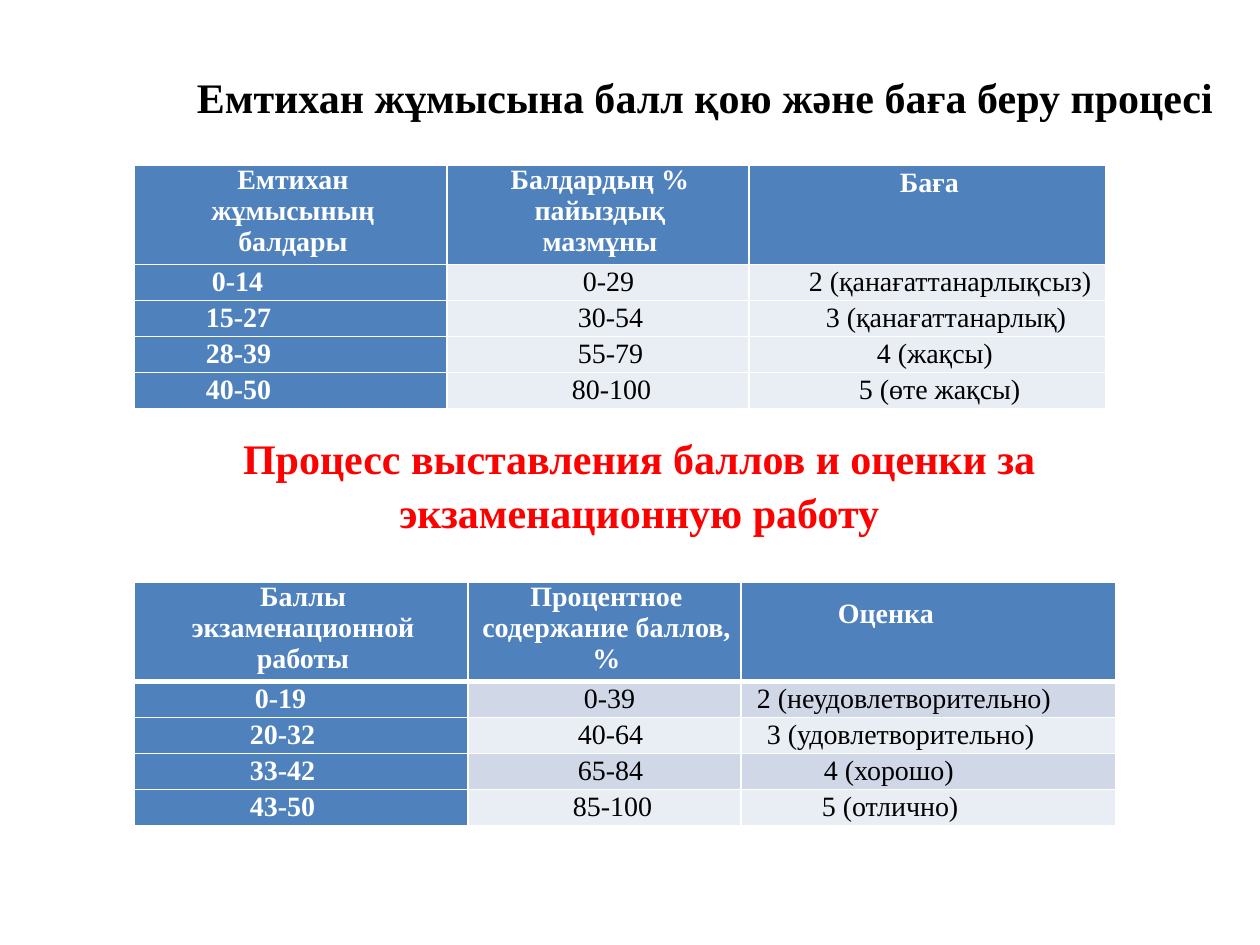
from dataclasses import dataclass

from lxml.etree import SubElement
from pptx import Presentation
from pptx.dml.color import RGBColor
from pptx.enum.text import MSO_AUTO_SIZE as AutoSize, PP_ALIGN as Align
from pptx.oxml.ns import qn
from pptx.util import Pt

PX = 914400 / 126
FONT = "Times New Roman"
BLACK = RGBColor(0, 0, 0)
WHITE = RGBColor(255, 255, 255)
RED = RGBColor(255, 0, 0)
BLUE = RGBColor(0x4F, 0x81, 0xBD)
LIGHT = RGBColor(0xE9, 0xED, 0xF4)
DARKER = RGBColor(0xD0, 0xD8, 0xE8)
HEADER_HEIGHT, ROW_HEIGHT = 99, 36


@dataclass
class Heading:
    text: str
    left: int
    top: int
    width: int
    height: int
    color: RGBColor
    wrap: bool
    indent: int
    line_spacing: float
    align: Align


@dataclass
class Entry:
    text: str
    indent: int
    right: int = 0
    top: int = 0
    centred: bool = False


@dataclass
class GradeTable:
    left: int
    top: int
    columns: list[int]
    bands: list[RGBColor]
    header_rule: int
    rows: list[list[Entry]]


HEADINGS = [
    Heading("Емтихан жұмысына балл қою және баға беру процесі",
            184, 65, 1052, 63, BLACK, False, 13, 1.0, Align.LEFT),
    Heading("Процесс выставления баллов и оценки за экзаменационную работу",
            54, 423, 1160, 122, RED, True, 23, 1.07, Align.CENTER),
]

TABLES = [
    GradeTable(134, 165, [313, 302, 357], [LIGHT], 1, [
        [Entry("Емтихан жұмысының балдары", 31, right=26, centred=True),
         Entry("Балдардың % пайыздық мазмұны", 29, right=25, centred=True),
         Entry("Баға", 151)],
        [Entry("0-14", 78), Entry("0-29", 136), Entry("2 (қанағаттанарлықсыз)", 60)],
        [Entry("15-27", 72), Entry("30-54", 131), Entry("3 (қанағаттанарлық)", 77)],
        [Entry("28-39", 72), Entry("55-79", 131), Entry("4 (жақсы)", 128)],
        [Entry("40-50", 72), Entry("80-100", 125), Entry("5 (өте жақсы)", 110)],
    ]),
    GradeTable(134, 582, [334, 273, 375], [DARKER, LIGHT], 3, [
        [Entry("Баллы экзаменационной работы", 14, right=10, centred=True),
         Entry("Процентное содержание баллов, %", 11, right=7, centred=True),
         Entry("Оценка", 97, top=14)],
        [Entry("0-19", 121), Entry("0-39", 116), Entry("2 (неудовлетворительно)", 16)],
        [Entry("20-32", 116), Entry("40-64", 110), Entry("3 (удовлетворительно)", 26)],
        [Entry("33-42", 116), Entry("65-84", 110), Entry("4 (хорошо)", 83)],
        [Entry("43-50", 116), Entry("85-100", 105), Entry("5 (отлично)", 81)],
    ]),
]


def px(length: int) -> int:
    return round(length * PX)


def style(paragraph, size: int, color: RGBColor, bold: bool) -> None:
    for run in paragraph.runs:
        run.font.name = FONT
        run.font.size = Pt(size)
        run.font.bold = bold
        run.font.color.rgb = color


def draw_heading(slide, heading: Heading) -> None:
    box = slide.shapes.add_textbox(px(heading.left), px(heading.top),
                                   px(heading.width), px(heading.height))
    frame = box.text_frame
    frame.word_wrap = heading.wrap
    frame.auto_size = AutoSize.SHAPE_TO_FIT_TEXT
    frame.margin_left = px(heading.indent)
    frame.text = heading.text
    paragraph = frame.paragraphs[0]
    paragraph.alignment = heading.align
    paragraph.line_spacing = heading.line_spacing
    style(paragraph, 24, heading.color, True)


def draw_borders(cell, top: int, bottom: int) -> None:
    """Rule all four sides in white; widths are in points."""
    properties = cell._tc.get_or_add_tcPr()
    for side, width in (("L", 1), ("R", 1), ("T", top), ("B", bottom)):
        line = SubElement(properties, qn(f"a:ln{side}"), w=str(Pt(width)))
        fill = SubElement(line, qn("a:solidFill"))
        SubElement(fill, qn("a:srgbClr"), val=str(WHITE))


def fill_cell(cell, entry: Entry, fill: RGBColor) -> None:
    cell.margin_left, cell.margin_right = px(entry.indent), px(entry.right)
    cell.margin_top, cell.margin_bottom = px(entry.top), 0
    cell.fill.solid()
    cell.fill.fore_color.rgb = fill
    cell.text_frame.text = entry.text
    paragraph = cell.text_frame.paragraphs[0]
    paragraph.alignment = Align.CENTER if entry.centred else Align.LEFT
    paragraph.line_spacing = 0.99 if entry.centred else 1.07
    on_blue = fill == BLUE
    style(paragraph, 16, WHITE if on_blue else BLACK, on_blue)


def draw_table(slide, grades: GradeTable) -> None:
    heights = [HEADER_HEIGHT] + [ROW_HEIGHT] * (len(grades.rows) - 1)
    table = slide.shapes.add_table(
        len(heights), len(grades.columns), px(grades.left), px(grades.top),
        px(sum(grades.columns)), px(sum(heights))).table
    table.horz_banding = False
    for column, width in zip(table.columns, grades.columns):
        column.width = px(width)
    for r, (height, entries) in enumerate(zip(heights, grades.rows)):
        table.rows[r].height = px(height)
        band = grades.bands[(r - 1) % len(grades.bands)]
        for c, entry in enumerate(entries):
            cell = table.cell(r, c)
            draw_borders(cell, grades.header_rule if r == 1 else 1,
                         grades.header_rule if r == 0 else 1)
            fill_cell(cell, entry, BLUE if r == 0 or c == 0 else band)


def main() -> None:
    deck = Presentation()
    deck.slide_width, deck.slide_height = px(1260), px(945)
    slide = deck.slides.add_slide(deck.slide_layouts[6])
    for heading in HEADINGS:
        draw_heading(slide, heading)
    for grades in TABLES:
        draw_table(slide, grades)
    deck.save("out.pptx")


if __name__ == "__main__":
    main()
